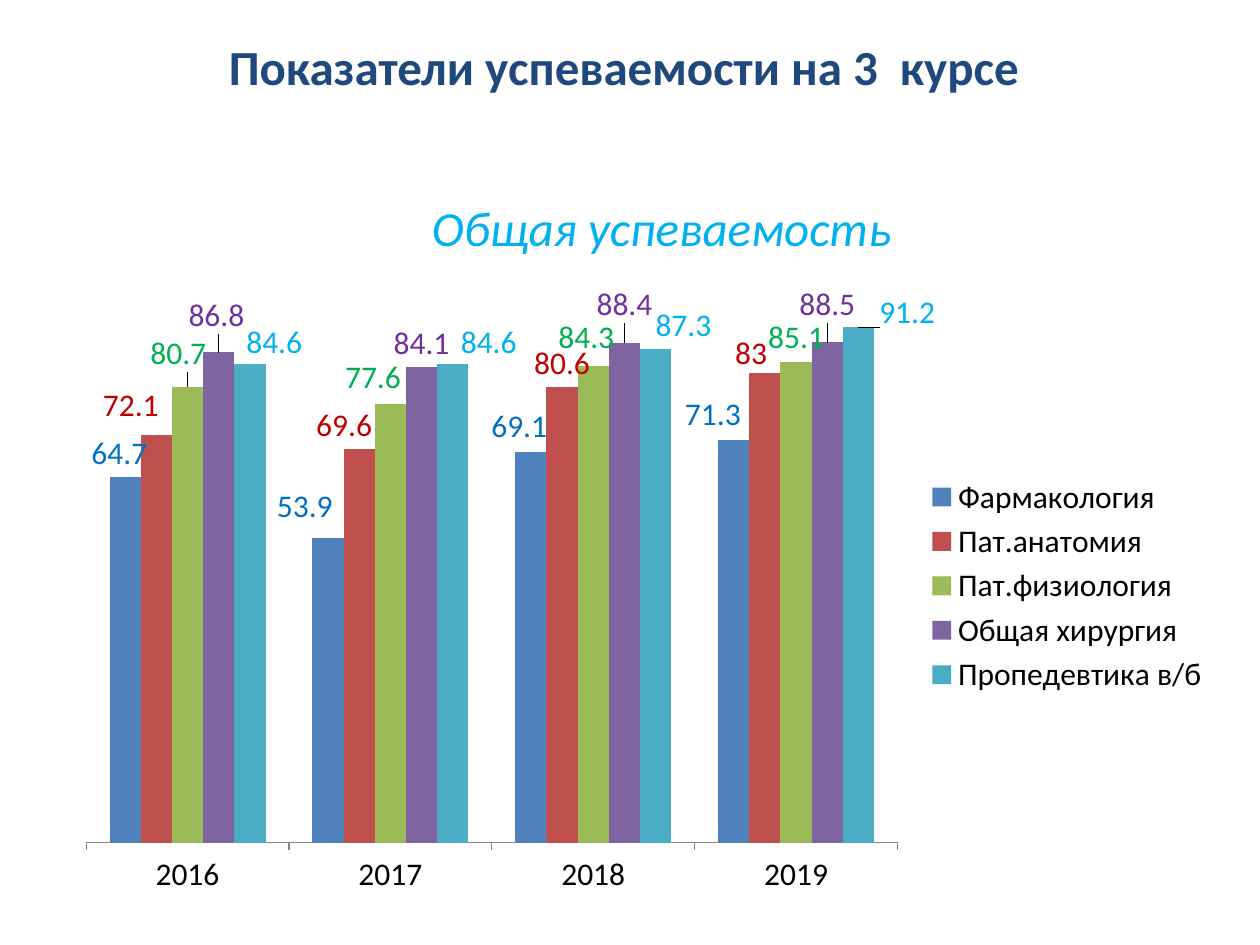
import lxml.etree
import pptx
import pptx.chart.data
import pptx.dml.color
import pptx.enum.chart
import pptx.enum.text
import pptx.oxml.ns
import pptx.util

RGB = pptx.dml.color.RGBColor
NAVY = RGB(0x1F, 0x49, 0x7D)
SKY = RGB(0x00, 0xB0, 0xF0)
BLACK = RGB(0x00, 0x00, 0x00)
GRAY = RGB(0x86, 0x86, 0x86)
FACE = "Calibri"

YEARS = ["2016", "2017", "2018", "2019"]
# Name, values, bar colour, label colour, label shifts in percent of the chart
ROWS = [
    ("Фармакология", [64.7, 53.9, 69.1, 71.3],
     RGB(0x4F, 0x81, 0xBD), RGB(0x00, 0x70, 0xC0),
     [(-0.5, 0), (-2, -1.2), (-1, -0.3), (-1.8, -0.2)]),
    ("Пат.анатомия", [72.1, 69.6, 80.6, 83],
     RGB(0xC0, 0x50, 0x4D), RGB(0xC0, 0x00, 0x00),
     [(-2.2, -0.9), (-1.3, 0), None, (-1.2, 0.6)]),
    ("Пат.физиология", [80.7, 77.6, 84.3, 85.1],
     RGB(0x9B, 0xBB, 0x59), RGB(0x00, 0xB0, 0x50),
     [(-0.8, -1.4), (-1.5, -0.5), (-0.6, -0.8), None]),
    ("Общая хирургия", [86.8, 84.1, 88.4, 88.5],
     RGB(0x80, 0x64, 0xA2), RGB(0x70, 0x30, 0xA0),
     [(-0.2, -2), None, (0, -2.3), (0, -2.2)]),
    ("Пропедевтика в/б", [84.6, 84.6, 87.3, 91.2],
     RGB(0x4B, 0xAC, 0xC6), SKY,
     [(2.1, 0.3), (3.1, 0.3), (2.4, 0), (4.2, 1.4)]),
]

deck = pptx.Presentation()
deck.slide_width = pptx.util.Inches(10)
deck.slide_height = pptx.util.Inches(7.5)
WIDE, HIGH = deck.slide_width, deck.slide_height
slide = deck.slides.add_slide(deck.slide_layouts[6])


def write(text, left, top, width, height, size=28, color=BLACK, bold=False, italic=False):
    """Add a centred text box; lengths are shares of the slide."""
    box = slide.shapes.add_textbox(
        int(left * WIDE), int(top * HIGH), int(width * WIDE), int(height * HIGH))
    frame = box.text_frame
    frame.word_wrap = True
    frame.vertical_anchor = pptx.enum.text.MSO_ANCHOR.MIDDLE
    para = frame.paragraphs[0]
    para.alignment = pptx.enum.text.PP_ALIGN.CENTER
    run = para.add_run()
    run.text = text
    run.font.name = FACE
    run.font.size = pptx.util.Pt(size)
    run.font.color.rgb = color
    run.font.bold = bold
    run.font.italic = italic


def lay(owner, index, **marks):
    """Put a manual layout into a chart element, replacing any it has."""
    tag = pptx.oxml.ns.qn
    for old in owner.findall(tag("c:layout")):
        owner.remove(old)
    node = lxml.etree.Element(tag("c:layout"))
    manual = lxml.etree.SubElement(node, tag("c:manualLayout"))
    for name, value in marks.items():
        lxml.etree.SubElement(manual, tag("c:" + name)).set("val", str(value))
    owner.insert(index, node)


write("Общая успеваемость", 0.075, 0.2, 0.9, 0.08, color=SKY, italic=True)

data = pptx.chart.data.CategoryChartData()
data.categories = YEARS
for name, values, *rest in ROWS:
    data.add_series(name, values)
chart = slide.shapes.add_chart(
    pptx.enum.chart.XL_CHART_TYPE.COLUMN_CLUSTERED,
    int(0.05 * WIDE), int(0.28 * HIGH), int(0.92 * WIDE), int(0.68 * HIGH), data).chart
chart.has_title = False
chart.font.name = FACE
chart.font.size = pptx.util.Pt(18)
chart.font.color.rgb = BLACK
chart.has_legend = True
chart.legend.position = pptx.enum.chart.XL_LEGEND_POSITION.RIGHT
chart.legend.include_in_layout = False

axis = chart.value_axis
axis.minimum_scale, axis.maximum_scale = 0, 100
axis.has_major_gridlines = False
axis.visible = False
axis = chart.category_axis
axis.major_tick_mark = pptx.enum.chart.XL_TICK_MARK.OUTSIDE
axis.format.line.color.rgb = GRAY
axis.format.line.width = pptx.util.Pt(0.75)

plot = chart.plots[0]
plot.gap_width = 150
plot.overlap = 0
plot.vary_by_categories = False
lay(chart._chartSpace.chart.plotArea, 0, layoutTarget="inner", xMode="edge",
    yMode="edge", x=0.02, y=0.02, w=0.7, h=0.88)

for series, (name, values, fill, ink, shifts) in zip(plot.series, ROWS):
    series.format.fill.solid()
    series.format.fill.fore_color.rgb = fill
    labels = series.data_labels
    labels.show_value = True
    tags = [labels]
    for point, shift in enumerate(shifts):
        if shift:
            tags.append(series.points[point].data_label)
    for tag in tags:
        tag.position = pptx.enum.chart.XL_LABEL_POSITION.OUTSIDE_END
        tag.font.name = FACE
        tag.font.size = pptx.util.Pt(18)
        tag.font.color.rgb = ink
    moved = labels._element.findall(pptx.oxml.ns.qn("c:dLbl"))
    for node, (right, down) in zip(moved, filter(None, shifts)):
        lay(node, 1, x=right / 100, y=down / 100)

write("Показатели успеваемости на 3  курсе", 0.02, 0.015, 0.95, 0.11,
      color=NAVY, bold=True)

deck.save("out.pptx")
